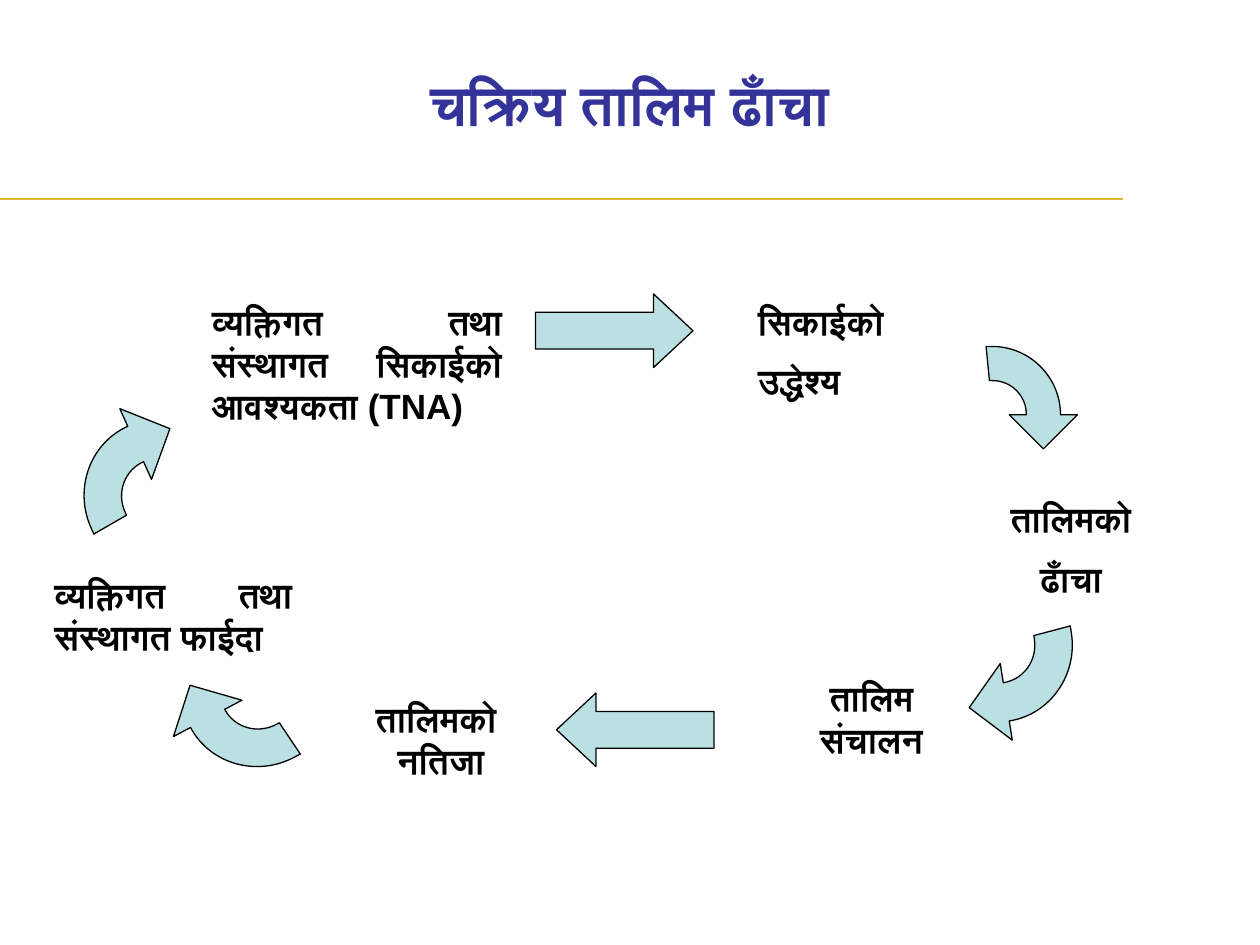
from lxml.etree import SubElement
from pptx import Presentation
from pptx.dml.color import RGBColor
from pptx.enum.lang import MSO_LANGUAGE_ID
from pptx.enum.shapes import MSO_CONNECTOR, MSO_SHAPE
from pptx.enum.text import MSO_AUTO_SIZE, PP_ALIGN
from pptx.oxml.ns import qn
from pptx.util import Inches, Pt

NAVY = RGBColor(0x33, 0x33, 0x99)
BLACK = RGBColor(0, 0, 0)
AQUA = RGBColor(0xBB, 0xE0, 0xE3)
GOLD = RGBColor(0xE1, 0xB5, 0x39)
WIDE, HIGH = Inches(10), Inches(7.5)
COLS, ROWS = 120, 90
UNIT = 10000
LEFT, MID, JUST = PP_ALIGN.LEFT, PP_ALIGN.CENTER, PP_ALIGN.JUSTIFY

LABELS = [
    (71, 28, 18, 11.2, LEFT, ["सिकाईको", "उद्धेश्य"]),
    (93, 46.8, 18, 11.2, MID, ["तालिमको", "ढाँचा"]),
    (74, 63.8, 18, 9.2, MID, ["तालिम संचालन"]),
    (33, 65.8, 18, 9.2, MID, ["तालिमको  नतिजा"]),
    (4, 54, 25, 9.2, JUST, ["व्यक्तिगत तथा संस्थागत फाईदा"]),
    (19, 28, 30, 13.2, JUST, ["व्यक्तिगत तथा संस्थागत सिकाईको आवश्यकता (TNA)"]),
]
BLOCKS = [(51, 28, 0), (53, 66, 180)]
BENDS = [
    (87.6, 54.24, 14.76, 14.28, 81.1),
    (88, 33, 13, 13, 0),
    (17.28, 58.68, 14.76, 14.28, 152),
    (7.8, 40.2, 14.76, 14.28, 245.9),
]
CURVE = [
    ("moveTo", [(0.5, 0)]),
    ("cubicBezTo", [(0.5, -0.28), (0.28, -0.5), (0, -0.5)]),
    ("cubicBezTo", [(-0.01, -0.5), (-0.03, -0.5), (-0.04, -0.5)]),
    ("lnTo", [(-0.09, -1)]),
    ("cubicBezTo", [(-0.06, -1), (-0.03, -1), (0, -1)]),
    ("cubicBezTo", [(0.55, -1), (1, -0.55), (1, 0)]),
    ("lnTo", [(1, 0)]),
    ("lnTo", [(1.25, 0)]),
    ("lnTo", [(0.75, 0.5)]),
    ("lnTo", [(0.25, 0)]),
    ("lnTo", [(0.5, 0)]),
    ("close", []),
]


def spot(col, row):
    """Turn a column and a row of the grid into slide lengths."""
    return round(WIDE * col / COLS), round(HIGH * row / ROWS)


def style(item, look):
    """Set each attribute named in a dict of format values."""
    for name, value in look.items():
        setattr(item, name, value)


def label(slide, col, row, cols, rows, align, lines, size=20, ink=BLACK):
    """Add a bold text box with one paragraph for each line."""
    box = slide.shapes.add_textbox(*spot(col, row), *spot(cols, rows))
    frame = box.text_frame
    style(frame, {"word_wrap": True, "auto_size": MSO_AUTO_SIZE.SHAPE_TO_FIT_TEXT})
    frame.text = "\n".join(lines)
    look = {"name": "Arial", "size": Pt(size), "bold": True,
            "language_id": MSO_LANGUAGE_ID.NEPALI}
    for rank, para in enumerate(frame.paragraphs):
        style(para, {"alignment": align, "space_before": Pt(size / 2 if rank else 0)})
        for run in para.runs:
            style(run.font, look)
            run.font.color.rgb = ink


def paint(shape, turn):
    """Give an arrow its turn, fill and thin outline."""
    shape.rotation = turn
    shape.shadow.inherit = False
    shape.fill.solid()
    shape.fill.fore_color.rgb = AQUA
    shape.line.color.rgb = BLACK
    shape.line.width = Pt(0.75)


def block(slide, col, row, turn):
    """Add a straight block arrow."""
    shape = slide.shapes.add_shape(
        MSO_SHAPE.RIGHT_ARROW, *spot(col, row), *spot(15, 7))
    shape.adjustments[0] = 0.5
    shape.adjustments[1] = 0.536
    paint(shape, turn)


def bend(slide, col, row, cols, rows, turn):
    """Add a curved arrow, drawn in radii from the centre of its frame."""
    form = slide.shapes.build_freeform(*spot(col, row))
    form.add_line_segments([spot(col + cols, row), spot(col + cols, row + rows)])
    shape = form.convert_to_shape()
    track = next(shape._element.iter(qn("a:path")))
    track.clear()
    for side in "wh":
        track.set(side, str(2 * UNIT))
    for kind, points in CURVE:
        step = SubElement(track, qn("a:" + kind))
        for x, y in points:
            dot = SubElement(step, qn("a:pt"))
            dot.set("x", str(round((1 + x) * UNIT)))
            dot.set("y", str(round((1 + y) * UNIT)))
    paint(shape, turn)


def rule(slide, cols, row):
    """Add the thin line below the title."""
    line = slide.shapes.add_connector(
        MSO_CONNECTOR.STRAIGHT, *spot(0, row), *spot(cols, row))
    line.line.color.rgb = GOLD
    line.line.width = Pt(0.75)
    SubElement(line._element.spPr, qn("a:effectLst"))


def main():
    """Build the training cycle slide."""
    deck = Presentation()
    style(deck, {"slide_width": WIDE, "slide_height": HIGH})
    slide = deck.slides.add_slide(deck.slide_layouts[6])
    rule(slide, 107, 18.96)
    label(slide, 6, 6, 108, 9.4, MID, ["चक्रिय तालिम ढाँचा"], 32, NAVY)
    for item in LABELS:
        label(slide, *item)
    for item in BLOCKS:
        block(slide, *item)
    for item in BENDS:
        bend(slide, *item)
    deck.save("out.pptx")


if __name__ == "__main__":
    main()
